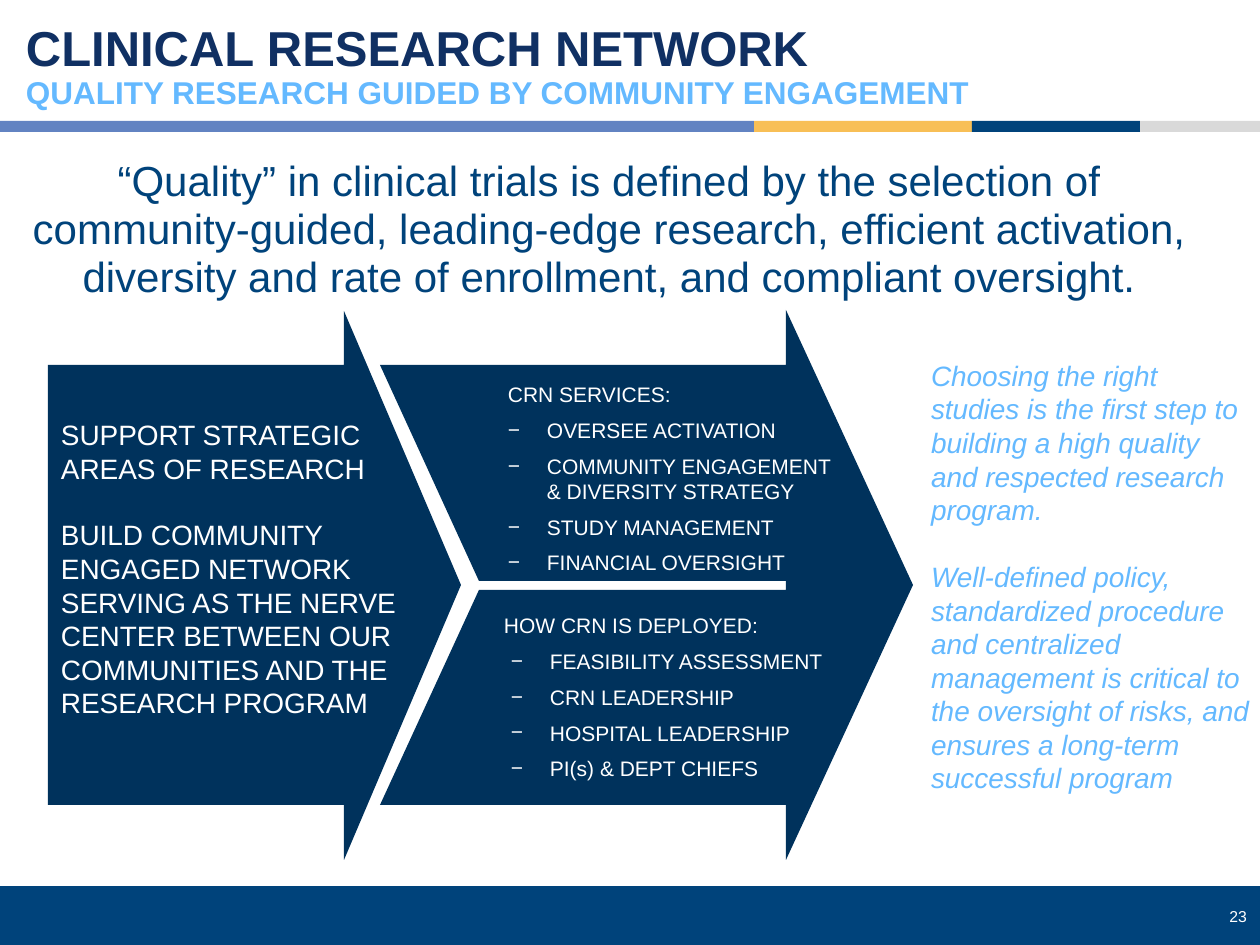
from pptx import Presentation
from pptx.dml.color import RGBColor
from pptx.enum.shapes import MSO_SHAPE
from pptx.enum.text import MSO_ANCHOR, MSO_AUTO_SIZE, PP_ALIGN
from pptx.oxml.ns import qn
from pptx.util import Pt
from lxml import etree

RECT = MSO_SHAPE.RECTANGLE
TOP, MIDDLE = MSO_ANCHOR.TOP, MSO_ANCHOR.MIDDLE
LEFT, CENTER, RIGHT = PP_ALIGN.LEFT, PP_ALIGN.CENTER, PP_ALIGN.RIGHT
NO_FIT = MSO_AUTO_SIZE.NONE

WHITE = RGBColor(0xFF, 0xFF, 0xFF)
NAVY = RGBColor(0x00, 0x43, 0x7B)
INK = RGBColor(0x00, 0x32, 0x5C)
TITLE = RGBColor(0x10, 0x30, 0x63)
SKY = RGBColor(0x64, 0xB9, 0xFF)
BLUE = RGBColor(0x62, 0x83, 0xC2)
AMBER = RGBColor(0xF8, 0xBF, 0x56)
GREY = RGBColor(0xD9, 0xD9, 0xD9)

FONT = "Arial"
SCALE = 914400 / 126
PAD = (13, 6, 13, 6)
FLUSH = (0, 0, 0, 0)


def px(n):
    return round(n * SCALE)


def paint(shape, color):
    shape.shadow.inherit = False
    shape.fill.solid()
    shape.fill.fore_color.rgb = color
    shape.line.fill.background()


def add_bar(slide, x, y, w, h, color):
    paint(slide.shapes.add_shape(RECT, px(x), px(y), px(w), px(h)), color)


def add_arrow(slide, points):
    pen = slide.shapes.build_freeform(*points[0], scale=SCALE)
    pen.add_line_segments(points[1:], close=True)
    shape = pen.convert_to_shape()
    paint(shape, INK)
    return shape


def set_font(font, size, color, bold=False, italic=False):
    font.name, font.size = FONT, Pt(size)
    font.color.rgb = color
    font.bold, font.italic = bold, italic


def set_frame(frame, anchor, pad):
    frame.word_wrap = True
    frame.auto_size = NO_FIT
    frame.vertical_anchor = anchor
    (frame.margin_left, frame.margin_top,
     frame.margin_right, frame.margin_bottom) = map(px, pad)


def write(frame, lines, size, color, gap=0, align=LEFT, italic=False):
    for i, line in enumerate(lines):
        para = frame.paragraphs[0] if i == 0 else frame.add_paragraph()
        para.text = line
        para.alignment = align
        if i:
            para.space_before = Pt(gap)
        set_font(para.font, size, color, italic=italic)


def add_text(slide, box, lines, size, color, anchor=TOP, pad=PAD, **style):
    frame = slide.shapes.add_textbox(*map(px, box)).text_frame
    set_frame(frame, anchor, pad)
    write(frame, lines, size, color, **style)
    return frame


def add_list(slide, box, head, items, start, indent):
    """Heading with dashed items under it, both indented in px."""
    frame = slide.shapes.add_textbox(*map(px, box)).text_frame
    set_frame(frame, MIDDLE, FLUSH)
    for i, line in enumerate([head] + items):
        para = frame.add_paragraph() if i else frame.paragraphs[0]
        para.text = line
        props = para._p.get_or_add_pPr()
        props.set("marL", str(px(indent if i else start)))
        props.set("indent", str(px(-39 if i else 0)))
        if i:
            etree.SubElement(props, qn("a:buFont")).set("typeface", FONT)
            etree.SubElement(props, qn("a:buChar")).set("char", "−")
            para.space_before = Pt(6)
        set_font(para.font, 12, WHITE)


def add_title(slide, head, sub):
    title = slide.shapes.title
    title.left, title.top, title.width, title.height = map(
        px, (13, -11, 1228, 157))
    set_frame(title.text_frame, MIDDLE, PAD)
    para = title.text_frame.paragraphs[0]
    para.alignment, para.line_spacing = LEFT, 0.9
    for text, size, color in ((head, 28, TITLE), (sub, 18, SKY)):
        run = para.add_run()
        run.text = text
        set_font(run.font, size, color, bold=True)
        if text == head:
            para.add_line_break()


def main():
    deck = Presentation()
    deck.slide_width, deck.slide_height = px(1260), px(945)
    slide = deck.slides.add_slide(deck.slide_layouts[5])

    # Footer and colour band
    add_bar(slide, 0, 886, 1260, 59, NAVY)
    x = 0
    for end, color in ((754, BLUE), (972, AMBER), (1140, NAVY), (1260, GREY)):
        add_bar(slide, x, 121, end - x, 11, color)
        x = end
    add_text(slide, (1173, 901, 87, 32), ["23"], 9, WHITE, align=RIGHT)

    # Title and lead statement
    add_title(slide, "CLINICAL RESEARCH NETWORK",
              "QUALITY RESEARCH GUIDED BY COMMUNITY ENGAGEMENT")
    lead = add_text(slide, (6, 152, 1206, 158), [
        "“Quality” in clinical trials is defined by the selection of "
        "community-guided, leading-edge research, efficient activation, "
        "diversity and rate of enrollment, and compliant oversight."],
        24, NAVY, align=CENTER)
    lead.paragraphs[0].line_spacing = 0.95

    # Left arrow with the aims
    aims = add_arrow(slide, [
        (461, 585), (344, 311), (344, 365), (48, 365),
        (48, 805), (344, 805), (344, 860)]).text_frame
    set_frame(aims, MIDDLE, (13, 6, 24, 40))
    write(aims, [
        "SUPPORT STRATEGIC AREAS OF RESEARCH",
        "BUILD COMMUNITY ENGAGED NETWORK SERVING AS THE NERVE CENTER "
        "BETWEEN OUR COMMUNITIES AND THE RESEARCH PROGRAM"],
        16, WHITE, gap=19)

    # Right arrow, split by a slot, with two lists
    add_arrow(slide, [
        (786, 310), (786, 365), (380, 365), (479, 581), (786, 581),
        (786, 590), (479, 590), (380, 805), (786, 805), (786, 860),
        (913, 585)])
    add_list(slide, (469, 381, 370, 195), "CRN SERVICES:", [
        "OVERSEE ACTIVATION",
        "COMMUNITY ENGAGEMENT & DIVERSITY STRATEGY",
        "STUDY MANAGEMENT",
        "FINANCIAL OVERSIGHT"], 39, 78)
    add_list(slide, (480, 612, 352, 170), "HOW CRN IS DEPLOYED:", [
        "FEASIBILITY ASSESSMENT",
        "CRN LEADERSHIP",
        "HOSPITAL LEADERSHIP",
        "PI(s) & DEPT CHIEFS"], 24, 70)

    # Closing remarks
    add_text(slide, (931, 356, 321, 441), [
        "Choosing the right studies is the first step to building a high "
        "quality and respected research program.",
        "Well-defined policy, standardized procedure and centralized "
        "management is critical to the oversight of risks, and ensures a "
        "long-term successful program"],
        16, SKY, MIDDLE, FLUSH, gap=19, italic=True)

    deck.save("out.pptx")


if __name__ == "__main__":
    main()
